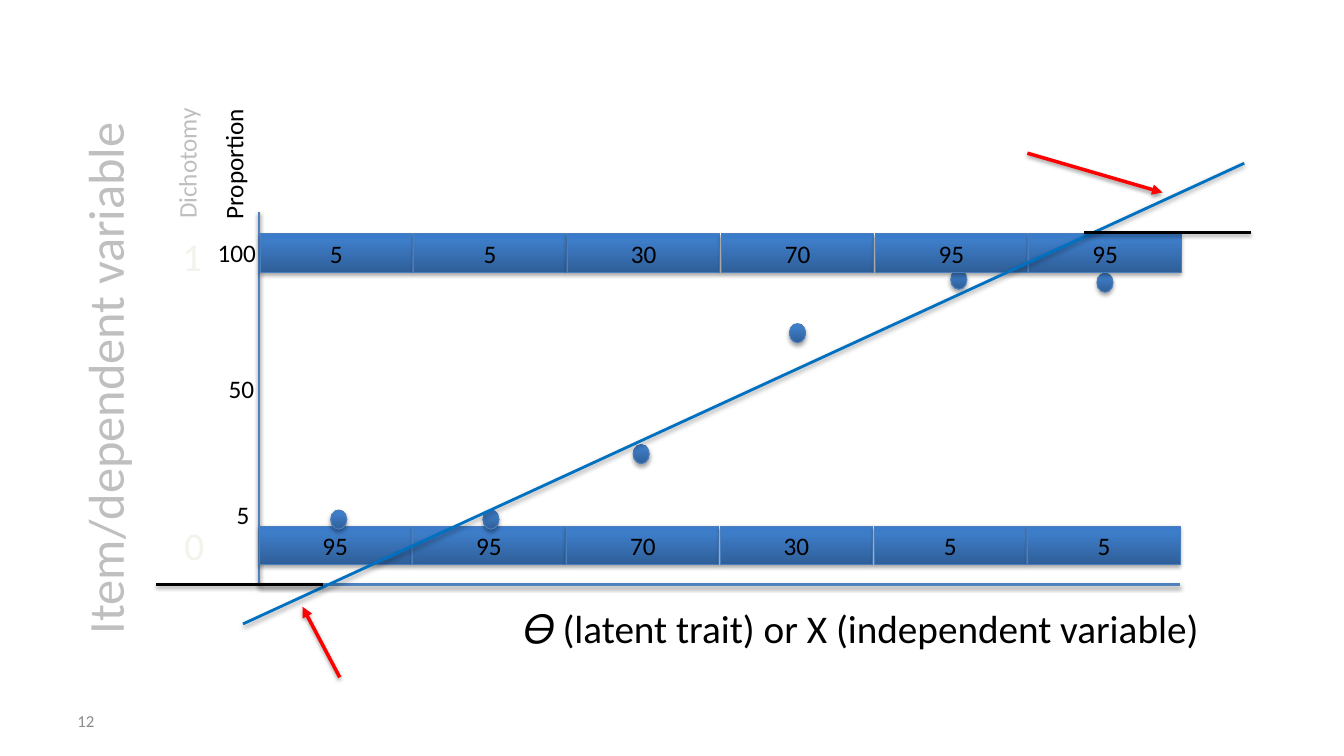
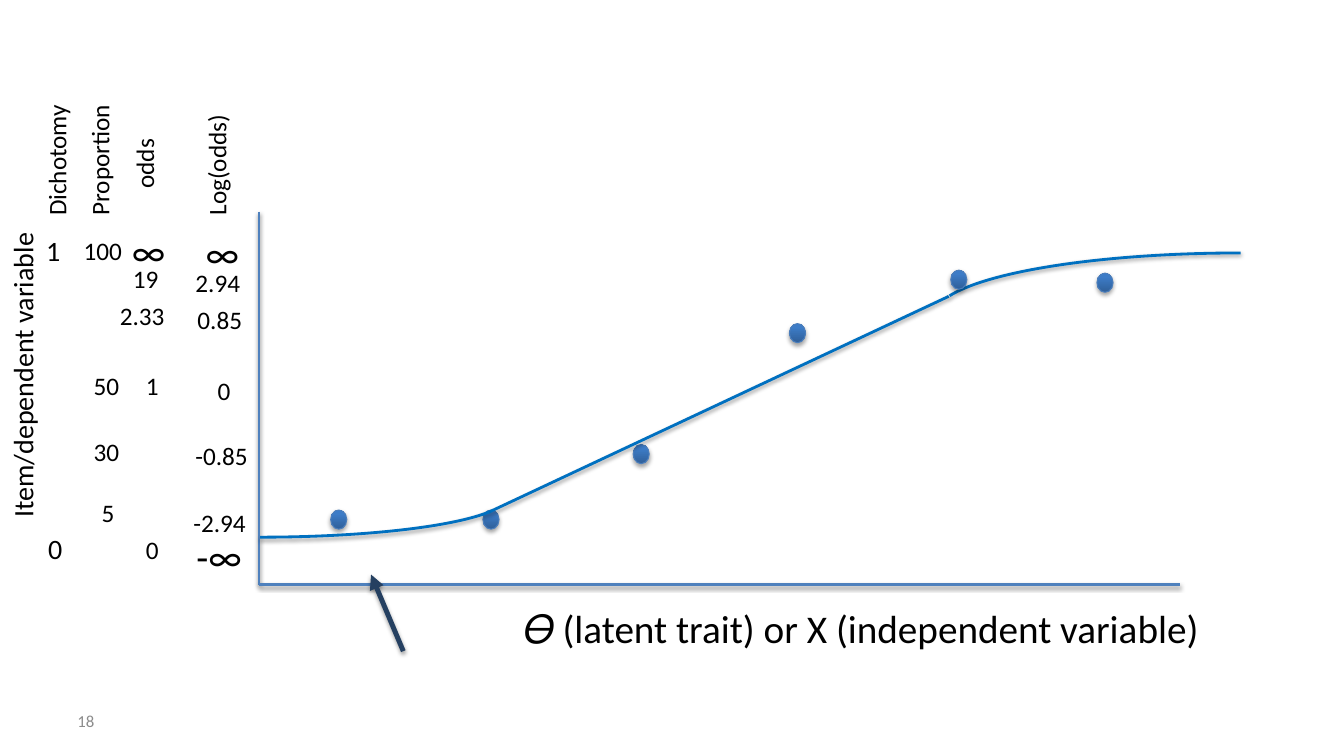
from copy import deepcopy

from pptx import Presentation
from pptx.dml.color import RGBColor
from pptx.enum.shapes import MSO_CONNECTOR, MSO_SHAPE
from pptx.enum.text import MSO_ANCHOR, MSO_AUTO_SIZE, PP_ALIGN
from pptx.oxml import parse_xml
from pptx.oxml.ns import nsdecls, qn
from pptx.util import Inches, Pt

STRAIGHT = MSO_CONNECTOR.STRAIGHT
RECT, OVAL, ARC = MSO_SHAPE.RECTANGLE, MSO_SHAPE.OVAL, MSO_SHAPE.ARC
MIDDLE = MSO_ANCHOR.MIDDLE
GROW = MSO_AUTO_SIZE.SHAPE_TO_FIT_TEXT
CENTER = PP_ALIGN.CENTER

FONT = "Calibri"
BLACK, GRAY, PALE, MUTED = "000000", "BFBFBF", "F3F2EB", "8C8C8C"
AXIS, CURVE, EDGE = "4F81BD", "0070C0", "4B7EBC"
RED, NAVY = "FF0000", "254061"
STOPS = [(0, "2F5F99"), (0.8, "3D7CC7"), (1, "3A7CCB")]

LEFT, RIGHT, TOP, BASE = 2.57, 11.7, 2.1, 5.8
STEP, WIDE, TALL = 1.525, 1.51, 0.38
DOTS = [(3.28, 5.06), (4.79, 5.06), (6.28, 4.41), (7.83, 3.21), (10.88, 2.71)]
CREST = (9.43, 2.68)


def color(code):
    return RGBColor.from_string(code)


class Deck:
    def __init__(self):
        self.file = Presentation()
        self.file.slide_width = Inches(13.33)
        self.file.slide_height = Inches(7.5)

    def start(self, number):
        self.slide = self.file.slides.add_slide(self.file.slide_layouts[6])
        self.shapes = self.slide.shapes
        box = self.text(number, 0.67, 6.95, 3.11, 12, MUTED, wrap=True, grow=False)
        box.height = Inches(0.4)
        box.text_frame.vertical_anchor = MIDDLE
        self.line((LEFT, TOP), (LEFT, BASE), AXIS)
        self.line((RIGHT, BASE), (LEFT, BASE), AXIS)
        self.text("𝛳 (latent trait) or X (independent variable)",
                  5.09, 5.95, 6.93, 28, wrap=True)

    def style(self, frame, size, ink):
        font = frame.paragraphs[0].font
        font.name, font.size = FONT, Pt(size)
        font.color.rgb = color(ink)

    def text(self, words, x, y, w, size=18, ink=BLACK, turn=0, wrap=False, grow=True):
        high = size * 1.2 / 72 + 0.1
        box = self.shapes.add_textbox(Inches(x), Inches(y), Inches(w), Inches(high))
        box.rotation = turn
        frame = box.text_frame
        frame.text = words
        frame.word_wrap = wrap
        if grow:
            frame.auto_size = GROW
        self.style(frame, size, ink)
        return box

    def shade(self, shape, alpha=38, dist=1.6):
        shape._element.spPr.append(parse_xml(
            f'<a:effectLst {nsdecls("a")}><a:outerShdw blurRad="{Pt(3.1)}" '
            f'dist="{Pt(dist)}" dir="5400000" rotWithShape="0">'
            f'<a:srgbClr val="000000"><a:alpha val="{alpha * 1000}"/></a:srgbClr>'
            '</a:outerShdw></a:effectLst>'))

    def stroke(self, shape, ink, width):
        shape.line.color.rgb = color(ink)
        shape.line.width = Pt(width)

    def line(self, begin, end, ink, width=2, arrow=False):
        link = self.shapes.add_connector(
            STRAIGHT, *(Inches(n) for n in begin + end))
        self.stroke(link, ink, width)
        if arrow:
            link.line._get_or_add_ln().append(
                parse_xml(f'<a:tailEnd {nsdecls("a")} type="triangle"/>'))
        self.shade(link)

    def solid(self, kind, x, y, w, h):
        shape = self.shapes.add_shape(kind, Inches(x), Inches(y), Inches(w), Inches(h))
        shape.fill.gradient()
        shape.fill.gradient_angle = 90
        group = shape._element.spPr.find(qn("a:gradFill")).find(qn("a:gsLst"))
        group.append(deepcopy(group[-1]))
        for stop, (place, code) in zip(shape.fill.gradient_stops, STOPS):
            stop.position = place
            stop.color.rgb = color(code)
        self.stroke(shape, EDGE, 0.75)
        self.shade(shape, 35, 1.8)
        return shape

    def dot(self, x, y):
        self.solid(OVAL, x, y, 0.16, 0.19)

    def bars(self, x, y, counts):
        for i, count in enumerate(counts):
            frame = self.solid(RECT, x + i * STEP, y, WIDE, TALL).text_frame
            frame.text = str(count)
            frame.vertical_anchor = MIDDLE
            frame.paragraphs[0].alignment = CENTER
            self.style(frame, 18, BLACK)

    def arc(self, x, y, w, h, flip):
        curve = self.shapes.add_shape(ARC, Inches(x), Inches(y), Inches(w), Inches(h))
        curve.adjustments[0] = 162
        curve.adjustments[1] = 213.74
        curve._element.spPr.xfrm.set(flip, "1")
        curve.fill.background()
        self.stroke(curve, CURVE, 2)
        self.shade(curve)


def linear(deck):
    deck.start("12")
    deck.text("Item/dependent variable", -1.63, 3.38, 5.32, 36, GRAY, 270)
    deck.text("Dichotomy", 1.19, 1.41, 1.32, ink=GRAY, turn=270)
    deck.text("Proportion", 1.66, 1.42, 1.31, turn=270)
    deck.text("1", 1.71, 2.26, 0.4, 28, PALE)
    deck.text("0", 1.73, 5.12, 0.4, 28, PALE)
    for words, x, y, w in [("5", 2.25, 4.9, 0.33), ("50", 2.17, 3.65, 0.46),
                           ("100", 2.06, 2.31, 0.59)]:
        deck.text(words, x, y, w)
    deck.bars(2.57, 5.22, [95, 95, 70, 30, 5, 5])
    for point in DOTS + [CREST]:
        deck.dot(*point)
    deck.bars(2.58, 2.32, [5, 5, 30, 70, 95, 95])
    deck.line((12.34, 1.62), (2.41, 6.19), CURVE)
    deck.line((3.37, 6.72), (3, 6.02), RED, 2.5, True)
    deck.line((10.19, 1.52), (11.53, 1.91), RED, 2.5, True)
    deck.line((3.2, BASE), (1.55, BASE), BLACK)
    deck.line((12.41, 2.31), (10.75, 2.31), BLACK)


def logit(deck):
    deck.start("18")
    deck.text("Item/dependent variable", -1.31, 3.49, 3.06, 20, turn=270)
    for point in DOTS:
        deck.dot(*point)
    deck.line((9.41, 2.94), (4.85, 5.08), CURVE)
    for words, x, y, w in [("Dichotomy", -0.1, 1.38, 1.32),
                           ("Proportion", 0.33, 1.38, 1.31),
                           ("odds", 1.08, 1.42, 0.7),
                           ("Log(odds)", 1.54, 1.43, 1.21)]:
        deck.text(words, x, y, w, turn=270)
    for words, x, y, w, size in [
            ("1", 0.36, 2.27, 0.34, 20), ("0", 0.38, 5.22, 0.34, 20),
            ("100", 0.73, 2.29, 0.59, 18), ("50", 0.83, 3.62, 0.46, 18),
            ("30", 0.83, 4.28, 0.46, 18), ("5", 0.91, 4.88, 0.33, 18),
            ("∞", 1.21, 2.21, 0.54, 28), ("19", 1.22, 2.56, 0.46, 18),
            ("2.33", 1.09, 2.93, 0.65, 18), ("1", 1.35, 3.62, 0.33, 18),
            ("0", 1.35, 5.25, 0.33, 18), ("∞", 1.94, 2.23, 0.54, 28),
            ("2.94", 1.84, 2.6, 0.65, 18), ("0.85", 1.86, 2.97, 0.65, 18),
            ("0", 2.06, 3.67, 0.33, 18), ("-0.85", 1.84, 4.32, 0.73, 18),
            ("-2.94", 1.82, 4.98, 0.73, 18), ("-∞", 1.85, 5.23, 0.66, 28)]:
        deck.text(words, x, y, w, size)
    deck.arc(9.27, 2.51, 6.07, 1.23, "flipH")
    deck.arc(0.13, 4.53, 4.9, 0.8, "flipV")
    deck.line((4, 6.46), (3.68, 5.7), NAVY, 3.5, True)
    deck.dot(*CREST)


def main():
    deck = Deck()
    linear(deck)
    logit(deck)
    deck.file.save("out.pptx")


if __name__ == "__main__":
    main()
